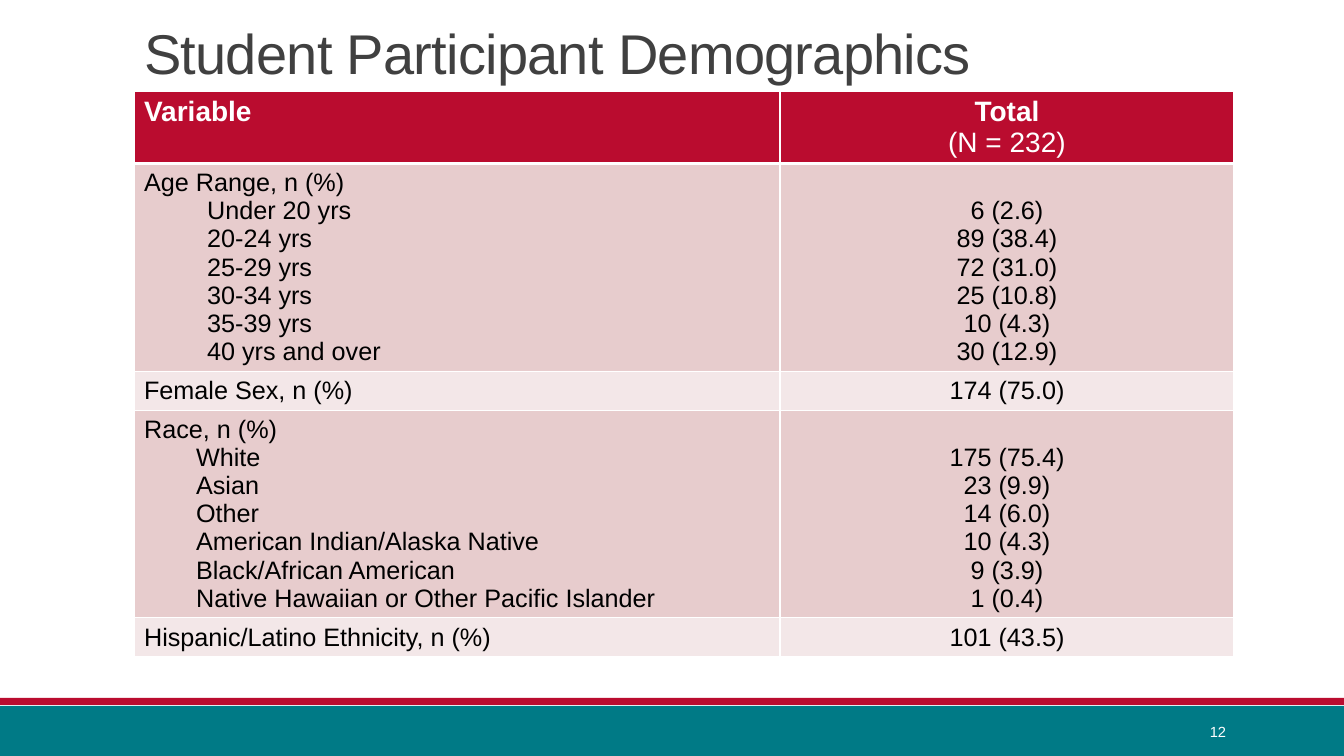
"""Build the student participant demographics slide."""
from lxml.etree import SubElement
from pptx import Presentation
from pptx.dml.color import RGBColor
from pptx.enum.shapes import MSO_SHAPE
from pptx.enum.text import MSO_ANCHOR, MSO_AUTO_SIZE, PP_ALIGN
from pptx.oxml.ns import qn
from pptx.util import Emu, Pt

TITLE = "Student Participant Demographics"
PAGE_NUMBER = "12"
HEADINGS = [["Variable"], ["Total", "(N = 232)"]]
GROUPS = [
    ("Age Range, n (%)", 63, [
        ("Under 20 yrs", "6 (2.6)"),
        ("20-24 yrs", "89 (38.4)"),
        ("25-29 yrs", "72 (31.0)"),
        ("30-34 yrs", "25 (10.8)"),
        ("35-39 yrs", "10 (4.3)"),
        ("40 yrs and over", "30 (12.9)"),
    ]),
    ("Female Sex, n (%)", 0, "174 (75.0)"),
    ("Race, n (%)", 52, [
        ("White", "175 (75.4)"),
        ("Asian", "23 (9.9)"),
        ("Other", "14 (6.0)"),
        ("American Indian/Alaska Native", "10 (4.3)"),
        ("Black/African American", "9 (3.9)"),
        ("Native Hawaiian or Other Pacific Islander", "1 (0.4)"),
    ]),
    ("Hispanic/Latino Ethnicity, n (%)", 0, "101 (43.5)"),
]
COLORS = {"red": "BA0C2F", "teal": "007A86", "dark_band": "E7CCCD", "light_band": "F3E7E8",
          "white": "FFFFFF", "black": "000000", "title": "404040"}
BANDS = [("teal", 706, 50), ("red", 698, 7)]
COLUMN_WIDTHS = [646, 454]
HEADER_HEIGHT, GROUP_HEIGHT, SINGLE_HEIGHT = 72, 207, 39
SLIDE_WIDTH, SLIDE_HEIGHT = 1344, 756


def px(length):
    return Emu(round(length * 914400 / 100.8))


def rgb(name):
    return RGBColor.from_string(COLORS[name])


def write(frame, lines, size=18, color="black", align=PP_ALIGN.LEFT, anchor=MSO_ANCHOR.MIDDLE,
          bold_first=False, indent=0, line_spacing=None, tracking=None):
    frame.word_wrap = True
    frame.vertical_anchor = anchor
    for index, line in enumerate(lines):
        paragraph = frame.paragraphs[0] if index == 0 else frame.add_paragraph()
        paragraph.alignment = align
        if line_spacing:
            paragraph.line_spacing = line_spacing
        if index and indent:
            paragraph._p.get_or_add_pPr().set("marL", str(px(indent)))
        run = paragraph.add_run()
        run.text = line
        run.font.name = "Arial"
        run.font.size = Pt(size)
        run.font.bold = bold_first and index == 0
        run.font.color.rgb = rgb(color)
        if tracking:
            run._r.get_or_add_rPr().set("spc", str(tracking))


def style_cell(cell, fill, bottom_width=1):
    properties = cell._tc.get_or_add_tcPr()
    for side in ("lnL", "lnR", "lnT", "lnB"):
        width = bottom_width if side == "lnB" else 1
        border = SubElement(properties, qn(f"a:{side}"), w=str(Pt(width)))
        SubElement(SubElement(border, qn("a:solidFill")), qn("a:srgbClr"), val=COLORS["white"])
    cell.fill.solid()
    cell.fill.fore_color.rgb = rgb(fill)


def add_demographics(slide):
    heights = [HEADER_HEIGHT] + [
        SINGLE_HEIGHT if isinstance(values, str) else GROUP_HEIGHT for _, _, values in GROUPS]
    table = slide.shapes.add_table(len(heights), len(COLUMN_WIDTHS), px(134), px(91),
                                   px(sum(COLUMN_WIDTHS)), px(sum(heights))).table
    for column, width in zip(table.columns, COLUMN_WIDTHS):
        column.width = px(width)
    for row, height in zip(table.rows, heights):
        row.height = px(height)

    aligns = [PP_ALIGN.LEFT, PP_ALIGN.CENTER]
    for column, heading in enumerate(HEADINGS):
        cell = table.cell(0, column)
        style_cell(cell, "red", bottom_width=3)
        write(cell.text_frame, heading, size=20, color="white", align=aligns[column],
              anchor=MSO_ANCHOR.TOP, bold_first=True)
        cell.vertical_anchor = MSO_ANCHOR.TOP

    for row, (variable, indent, values) in enumerate(GROUPS, start=1):
        if isinstance(values, str):
            columns = [[variable], [values]]
        else:
            columns = [[variable] + [label for label, _ in values], [total for _, total in values]]
        for column, lines in enumerate(columns):
            cell = table.cell(row, column)
            style_cell(cell, "dark_band" if row % 2 else "light_band")
            write(cell.text_frame, lines, align=aligns[column],
                  indent=indent if column == 0 else 0)
            cell.vertical_anchor = MSO_ANCHOR.BOTTOM


def main():
    deck = Presentation()
    deck.slide_width, deck.slide_height = px(SLIDE_WIDTH), px(SLIDE_HEIGHT)
    slide = deck.slides.add_slide(deck.slide_layouts[5])

    for color, top, height in BANDS:
        band = slide.shapes.add_shape(MSO_SHAPE.RECTANGLE, 0, px(top), px(SLIDE_WIDTH), px(height))
        band.shadow.inherit = False
        band.fill.solid()
        band.fill.fore_color.rgb = rgb(color)
        band.line.fill.background()

    add_demographics(slide)

    title = slide.shapes.title
    title.left, title.top, title.width, title.height = px(134), px(-16), px(1109), px(107)
    title.text_frame.auto_size = MSO_AUTO_SIZE.NONE
    write(title.text_frame, [TITLE], size=40, color="title", anchor=MSO_ANCHOR.BOTTOM,
          line_spacing=0.85, tracking=-50)

    page_number = slide.shapes.add_textbox(px(1092), px(712), px(144), px(40))
    write(page_number.text_frame, [PAGE_NUMBER], size=10.5, color="white", align=PP_ALIGN.RIGHT)

    deck.save("out.pptx")


if __name__ == "__main__":
    main()
